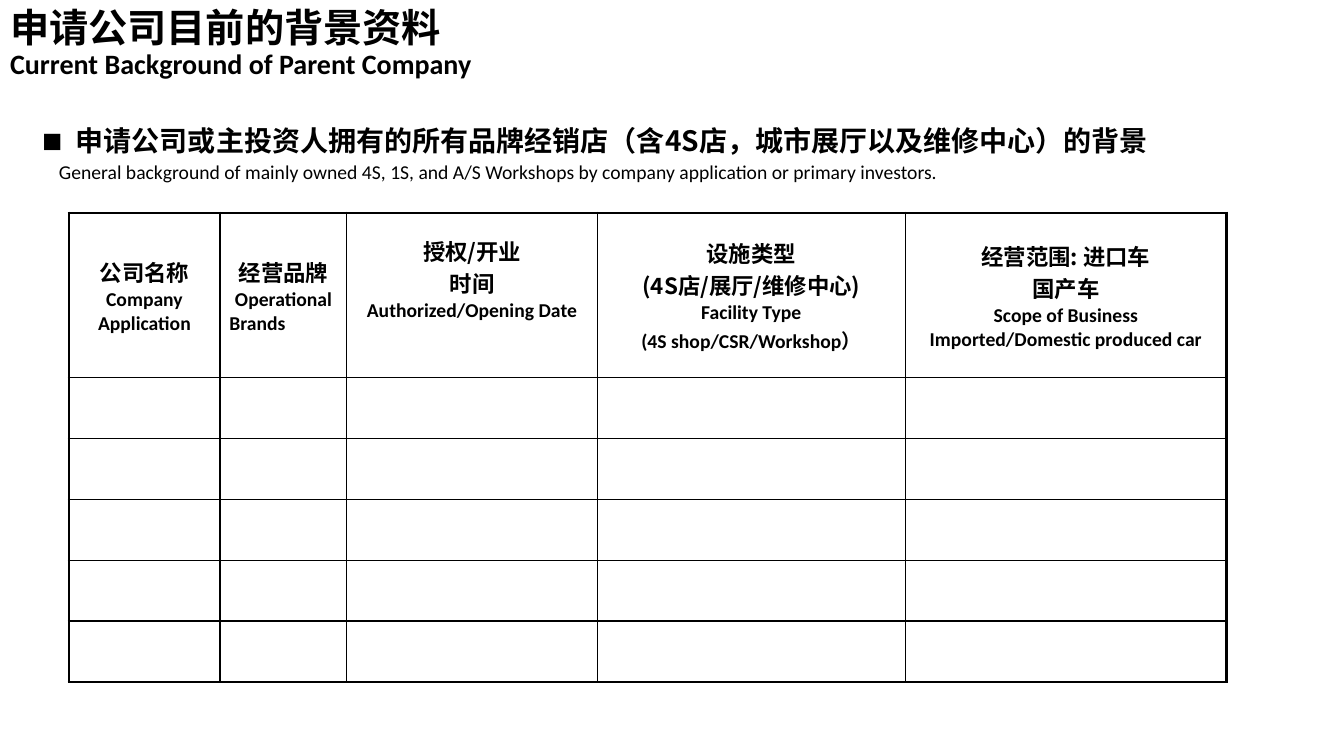
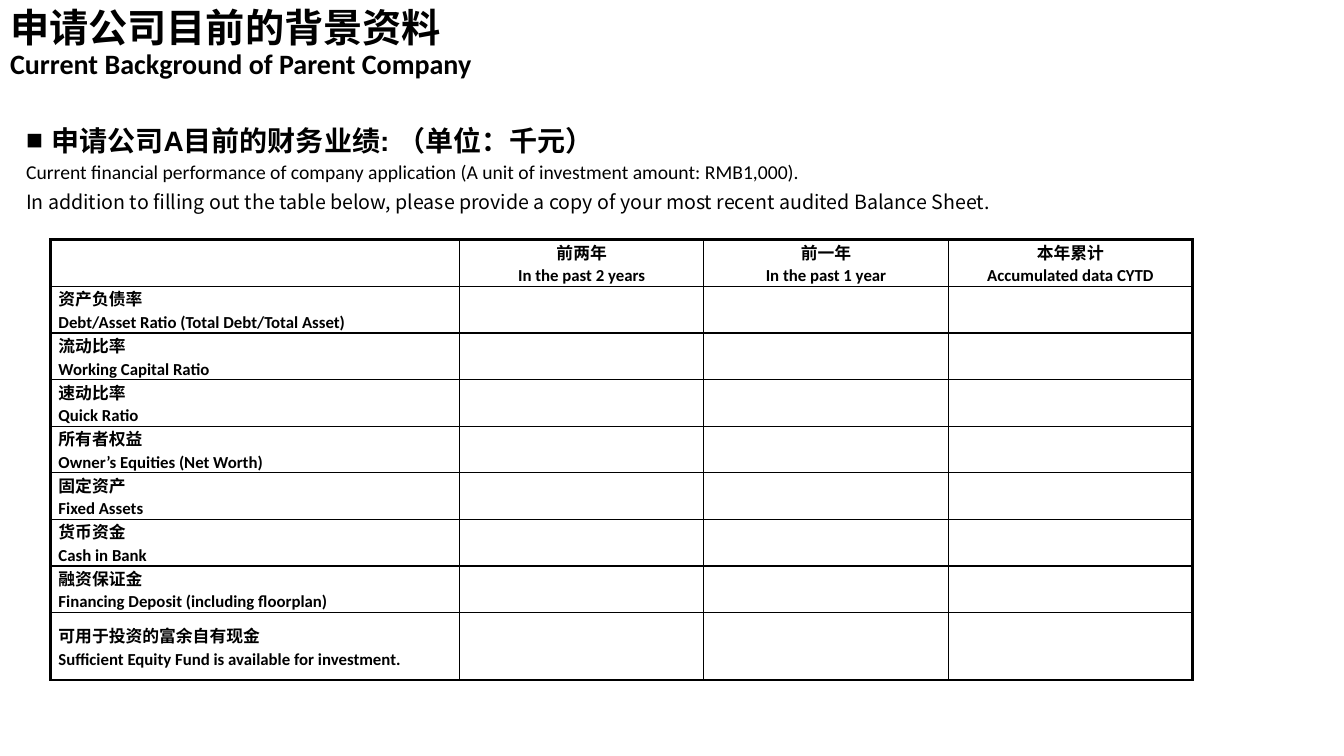
from dataclasses import dataclass

from lxml.etree import SubElement
from pptx import Presentation
from pptx.dml.color import RGBColor
from pptx.enum.text import MSO_ANCHOR as Anchor, MSO_AUTO_SIZE as AutoSize, PP_ALIGN as Align
from pptx.oxml import parse_xml
from pptx.oxml.ns import nsdecls, qn
from pptx.util import Inches, Pt


@dataclass(frozen=True)
class Theme:
    ink: str = "000000"
    chinese: str = "Noto Sans CJK SC"
    english: str = "Calibri"
    plain: str = "Arial"
    title: int = 28
    heading: int = 20
    header: int = 16
    body: int = 14
    small: int = 12
    outer_line: float = 2.25
    inner_line: float = 1


@dataclass(frozen=True)
class Span:
    text: str
    font: str
    size: int
    bold: bool = True


@dataclass(frozen=True)
class Line:
    spans: tuple
    align: Align = Align.LEFT
    before: float = 0
    spacing: float = None
    indent: float = 0
    hang: float = 0
    bullet_share: int = 0


@dataclass(frozen=True)
class Entry:
    lines: tuple
    left: float = 0
    bottom: float = 0


class Deck:
    COLUMNS, ROWS = 160, 90

    def __init__(self, theme):
        self.theme = theme
        self.deck = Presentation()
        self.deck.slide_width = Inches(13.33)
        self.deck.slide_height = Inches(7.5)
        self.page = None

    def across(self, columns):
        return round(self.deck.slide_width * columns / self.COLUMNS)

    def down(self, rows):
        return round(self.deck.slide_height * rows / self.ROWS)

    def area(self, left, top, width, height):
        return self.across(left), self.down(top), self.across(width), self.down(height)

    def add_page(self, chinese, english):
        theme = self.theme
        self.page = self.deck.slides.add_slide(self.deck.slide_layouts[5])
        title = self.page.shapes.title
        title.left, title.top, title.width, title.height = self.area(0, 0, 111.8, 10.6)
        frame = title.text_frame
        frame.word_wrap = True
        frame.auto_size = AutoSize.NONE
        frame.vertical_anchor = Anchor.MIDDLE
        para = frame.paragraphs[0]
        para.alignment = Align.LEFT
        para.line_spacing = 0.9
        self.add_span(para, Span(chinese, theme.chinese, theme.title))
        para.add_line_break()
        self.add_span(para, Span(english, theme.english, theme.heading))

    def add_span(self, para, span):
        run = para.add_run()
        run.text = span.text
        font = run.font
        font.name, font.size, font.bold = span.font, Pt(span.size), span.bold
        font.color.rgb = RGBColor.from_string(self.theme.ink)
        east_asian = SubElement(run._r.get_or_add_rPr(), qn("a:ea"))
        east_asian.set("typeface", self.theme.chinese)

    def add_lines(self, frame, lines):
        for index, line in enumerate(lines):
            para = frame.add_paragraph() if index else frame.paragraphs[0]
            para.alignment = line.align
            if index:
                para.space_before = Pt(line.before)
            if line.spacing:
                para.line_spacing = Pt(line.spacing)
            properties = para._p.get_or_add_pPr()
            properties.set("marL", str(self.across(line.indent)))
            properties.set("indent", str(-self.across(line.hang)))
            if line.bullet_share:
                SubElement(properties, qn("a:buSzPct")).set("val", str(line.bullet_share * 1000))
                SubElement(properties, qn("a:buFont")).set("typeface", self.theme.plain)
                SubElement(properties, qn("a:buChar")).set("char", "■")
            for span in line.spans:
                self.add_span(para, span)

    def add_text(self, area, lines):
        frame = self.page.shapes.add_textbox(*self.area(*area)).text_frame
        frame.word_wrap = True
        self.add_lines(frame, lines)

    def add_table(self, left, top, widths, heights, entries):
        area = self.area(left, top, sum(widths), sum(heights))
        table = self.page.shapes.add_table(len(heights), len(widths), *area).table
        table.first_row = table.horz_banding = False
        for column, width in zip(table.columns, widths):
            column.width = self.across(width)
        for row, height in zip(table.rows, heights):
            row.height = self.down(height)
        last_row, last_column = len(heights) - 1, len(widths) - 1
        for r in range(len(heights)):
            for c in range(len(widths)):
                cell = table.cell(r, c)
                entry = entries.get((r, c), Entry(()))
                cell.vertical_anchor = Anchor.MIDDLE
                cell.margin_right = cell.margin_top = 0
                cell.margin_left = self.across(entry.left)
                cell.margin_bottom = self.down(entry.bottom)
                cell.fill.background()
                self.add_borders(cell, L=c == 0, R=c == last_column, T=r == 0, B=r == last_row)
                self.add_lines(cell.text_frame, entry.lines)

    def add_borders(self, cell, **outer_sides):
        properties = cell._tc.get_or_add_tcPr()
        for index, (side, outer) in enumerate(outer_sides.items()):
            width = Pt(self.theme.outer_line if outer else self.theme.inner_line)
            properties.insert(index, parse_xml(
                f'<a:ln{side} {nsdecls("a")} w="{width}"><a:solidFill>'
                f'<a:srgbClr val="{self.theme.ink}"/></a:solidFill></a:ln{side}>'))


def add_dealership_page(deck):
    theme = deck.theme

    def chinese(text):
        return Line((Span(text, theme.chinese, theme.header),), Align.CENTER)

    def english(text, **style):
        style = {"align": Align.CENTER, **style}
        return Line((Span(text, theme.english, theme.body),), **style)

    deck.add_text((3.84, 14.16, 148.4, 11.4), (
        Line((Span("申请公司或主投资人拥有的所有品牌经销店（含4S店，城市展厅以及维修中心）的背景",
                   theme.chinese, theme.heading),), indent=4, hang=4, bullet_share=120),
        Line((Span("General background of mainly owned 4S, 1S, and A/S Workshops by company "
                   "application or primary investors.", theme.english, theme.body, False),),
             before=1.4, indent=2),
    ))
    workshop = Line((Span("(4S shop/CSR/Workshop", theme.english, theme.body),
                     Span("）", theme.chinese, theme.body)), Align.CENTER)
    headers = (
        Entry((chinese("公司名称"), english("Company Application"))),
        Entry((chinese("经营品牌"), english("Operational"),
               english("Brands", align=Align.LEFT, indent=1.1))),
        Entry((chinese("授权/开业"), chinese("时间"), english("Authorized/Opening Date")),
              bottom=3.9),
        Entry((chinese("设施类型"), chinese("(4S店/展厅/维修中心)"),
               english("Facility Type"), workshop)),
        Entry((chinese("经营范围: 进口车"), chinese("国产车"), english("Scope of Business"),
               english("Imported/Domestic produced car"))),
    )
    deck.add_table(8.2, 25.35, (18, 15.1, 29.8, 36.7, 38.2), (19.6,) + (7.25,) * 5,
                   {(0, column): entry for column, entry in enumerate(headers)})


def add_finance_page(deck):
    theme = deck.theme

    def label(chinese, english, align=Align.LEFT, left=0.96):
        return Entry((Line((Span(chinese, theme.plain, theme.small),), align),
                      Line((Span(english, theme.english, theme.small),), align, before=1.2)),
                     left=left)

    deck.add_text((1.92, 15.1, 154.4, 14.9), (
        Line((Span("申请公司A目前的财务业绩: （单位：千元）", theme.plain, theme.heading),),
             spacing=18, indent=3, hang=3, bullet_share=100),
        Line((Span("Current financial performance of company application "
                   "(A unit of investment amount: RMB1,000).",
                   theme.english, theme.body, False),), before=1, spacing=18),
        Line((Span("In addition to filling out the table below, please provide a copy of "
                   "your most recent audited Balance Sheet.",
                   theme.chinese, theme.body, False),), before=1, spacing=20),
    ))
    periods = (
        ("前两年", "In the past 2 years"),
        ("前一年", "In the past 1 year"),
        ("本年累计", "Accumulated data CYTD"),
    )
    measures = (
        ("资产负债率", "Debt/Asset Ratio (Total Debt/Total Asset)"),
        ("流动比率", "Working Capital Ratio"),
        ("速动比率", "Quick Ratio"),
        ("所有者权益", "Owner’s Equities (Net Worth)"),
        ("固定资产", "Fixed Assets"),
        ("货币资金", "Cash in Bank"),
        ("融资保证金", "Financing Deposit (including floorplan)"),
        ("可用于投资的富余自有现金", "Sufficient Equity Fund is available for investment."),
    )
    entries = {(0, column): label(*names, Align.CENTER, 0)
               for column, names in enumerate(periods, 1)}
    entries |= {(row, 0): label(*names) for row, names in enumerate(measures, 1)}
    deck.add_table(6, 28.55, (48.7,) + (29.1,) * 3, (5.55,) * 8 + (8.05,), entries)


def main():
    deck = Deck(Theme())
    for add_content in (add_dealership_page, add_finance_page):
        deck.add_page("申请公司目前的背景资料", "Current Background of Parent Company")
        add_content(deck)
    deck.deck.save("out.pptx")


if __name__ == "__main__":
    main()
